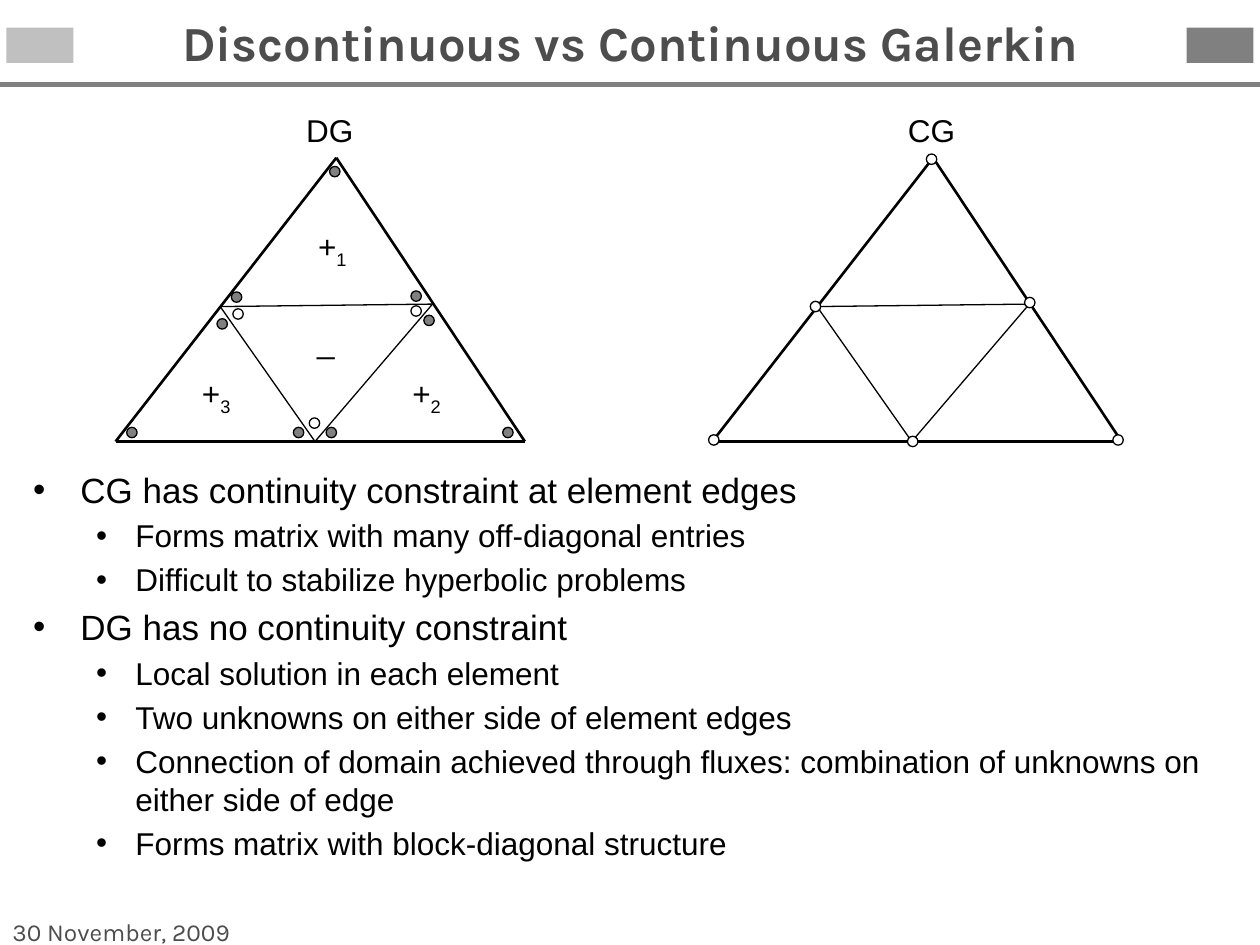
from lxml import etree
from pptx import Presentation
from pptx.dml.color import RGBColor
from pptx.enum.shapes import MSO_CONNECTOR, MSO_SHAPE
from pptx.enum.text import MSO_ANCHOR, MSO_AUTO_SIZE, PP_ALIGN
from pptx.oxml.ns import qn
from pptx.util import Cm, Pt

BLACK = RGBColor(0x00, 0x00, 0x00)
WHITE = RGBColor(0xFF, 0xFF, 0xFF)
GREY = RGBColor(0x80, 0x80, 0x80)
SILVER = RGBColor(0xC0, 0xC0, 0xC0)
CHARCOAL = RGBColor(0x4D, 0x4D, 0x4D)

SLIDE_WIDTH, SLIDE_HEIGHT = 25.4, 19.05
NODE_SIZE = 0.21
LABEL_WIDTH, LABEL_HEIGHT = 1.48, 1.02

# Mesh geometry in cm, relative to the top left of a mesh
LEFT, APEX, RIGHT = (0, 5.72), (4.45, 0), (8.25, 5.72)
BASE_MID, LEFT_MID, RIGHT_MID = (4.02, 5.72), (2.11, 3), (6.39, 2.95)
OUTER_EDGES = [(LEFT, RIGHT), (LEFT, APEX), (APEX, RIGHT)]
INNER_EDGES = [(BASE_MID, RIGHT_MID), (BASE_MID, LEFT_MID), (LEFT_MID, RIGHT_MID)]

CG_NODES = [(0.03, 5.69), (4.04, 5.72), (4.42, 0.03),
            (8.18, 5.69), (2.08, 3), (6.4, 2.92)]
DG_INNER_NODES = [(4.01, 5.35), (2.47, 3.15), (6.06, 3.09)]
DG_OUTER_NODES = [(0.33, 5.54), (4.42, 0.28), (7.91, 5.54),
                  (2.15, 3.35), (2.44, 2.81), (3.69, 5.54),
                  (4.35, 5.54), (6.32, 3.28), (6.06, 2.79)]
# Sign, subscript, centre x, top
DG_LABELS = [("_", "", 4.24, 3.18), ("+", "3", 2.03, 4.24),
             ("+", "2", 6.27, 4.24), ("+", "1", 4.37, 1.27)]

# Level and wording
POINTS = [
    (0, "CG has continuity constraint at element edges"),
    (1, "Forms matrix with many off-diagonal entries"),
    (1, "Difficult to stabilize hyperbolic problems"),
    (0, "DG has no continuity constraint"),
    (1, "Local solution in each element"),
    (1, "Two unknowns on either side of element edges"),
    (1, "Connection of domain achieved through fluxes: combination of "
        "unknowns on either side of edge"),
    (1, "Forms matrix with block-diagonal structure"),
]
# Size, left margin, hanging indent for each level
LEVELS = [(20, 0.95, 0.95), (18, 2.06, 0.79)]


def set_font(font, size, name="Arial", color=BLACK, bold=False):
    font.size, font.name, font.bold = Pt(size), name, bold
    font.color.rgb = color


def add_line(slide, start, end, color, width):
    line = slide.shapes.add_connector(
        MSO_CONNECTOR.STRAIGHT, *(Cm(value) for value in (*start, *end)))
    line.line.color.rgb = color
    line.line.width = Pt(width)
    etree.SubElement(line._element.spPr, qn("a:effectLst"))


def add_filled(slide, preset, left, top, width, height, fill):
    shape = slide.shapes.add_shape(preset, Cm(left), Cm(top), Cm(width), Cm(height))
    shape.shadow.inherit = False
    shape.fill.solid()
    shape.fill.fore_color.rgb = fill
    return shape


def add_text(slide, left, top, width, height, text):
    box = slide.shapes.add_textbox(Cm(left), Cm(top), Cm(width), Cm(height))
    box.text_frame.text = text
    box.text_frame.word_wrap = True
    return box.text_frame


def add_label(slide, center, top, text, subscript=""):
    frame = add_text(slide, center - LABEL_WIDTH / 2, top,
                     LABEL_WIDTH, LABEL_HEIGHT, text)
    frame.word_wrap = False
    frame.auto_size = MSO_AUTO_SIZE.SHAPE_TO_FIT_TEXT
    paragraph = frame.paragraphs[0]
    paragraph.alignment = PP_ALIGN.CENTER
    if subscript:
        index = paragraph.add_run()
        index.text = subscript
        index._r.get_or_add_rPr().set("baseline", "-25000")
    for run in paragraph.runs:
        set_font(run.font, 18)


def add_header(slide, left, top, width, height):
    add_line(slide, (left, top + height), (left + width, top + height), GREY, 3)
    # Plain emblem blocks at both ends
    emblem_width, emblem_height, margin = 1.35, 0.71, 0.13
    for x, fill in ((left + margin, SILVER),
                    (left + width - margin - emblem_width, GREY)):
        emblem = add_filled(slide, MSO_SHAPE.RECTANGLE, x, top + 0.56,
                            emblem_width, emblem_height, fill)
        emblem.line.fill.background()
    # Title
    frame = add_text(slide, left + 1.9, top, width - 3.8, height,
                     "Discontinuous vs Continuous Galerkin")
    frame.vertical_anchor = MSO_ANCHOR.MIDDLE
    title = frame.paragraphs[0]
    title.alignment = PP_ALIGN.CENTER
    set_font(title.runs[0].font, 28, "Karla", CHARCOAL, True)


def add_mesh(slide, left, top, name, name_center, node_sets, labels=()):
    for edges, width in ((OUTER_EDGES, 1.5), (INNER_EDGES, 0.75)):
        for (x1, y1), (x2, y2) in edges:
            add_line(slide, (left + x1, top + y1), (left + x2, top + y2), BLACK, width)
    for nodes, fill in node_sets:
        for x, y in nodes:
            node = add_filled(slide, MSO_SHAPE.OVAL, left + x - NODE_SIZE / 2,
                              top + y - NODE_SIZE / 2, NODE_SIZE, NODE_SIZE, fill)
            node.line.color.rgb = BLACK
            node.line.width = Pt(0.75)
    for sign, subscript, x, y in labels:
        add_label(slide, left + x, top + y, sign, subscript)
    add_label(slide, left + name_center, top - 1.07, name)


def add_points(slide, left, top, width, height):
    frame = add_text(slide, left, top, width, height,
                     "\n".join(text for _, text in POINTS))
    for number, (paragraph, (level, _)) in enumerate(zip(frame.paragraphs, POINTS)):
        size, margin, hanging = LEVELS[level]
        paragraph.level = level
        properties = paragraph._p.get_or_add_pPr()
        properties.set("marL", str(Cm(margin)))
        properties.set("indent", str(-Cm(hanging)))
        if number:
            paragraph.space_before = Pt(size * 0.2)
        etree.SubElement(properties, qn("a:buFont"), typeface="Arial")
        etree.SubElement(properties, qn("a:buChar"), char="•")
        set_font(paragraph.runs[0].font, size)


def add_date(slide, left, top, width, height):
    frame = add_text(slide, left, top, width, height, "30 November, 2009")
    set_font(frame.paragraphs[0].runs[0].font, 14, "Karla", CHARCOAL)


def main():
    presentation = Presentation()
    presentation.slide_width = Cm(SLIDE_WIDTH)
    presentation.slide_height = Cm(SLIDE_HEIGHT)
    slide = presentation.slides.add_slide(presentation.slide_layouts[6])

    add_header(slide, 0, 0, SLIDE_WIDTH, 1.7)
    add_date(slide, 0, 18.36, 5.92, 1.32)
    add_points(slide, 0.42, 9.31, 24.55, 9.1)
    add_mesh(slide, 14.36, 3.18, "CG", 4.42, [(CG_NODES, WHITE)])
    add_mesh(slide, 2.33, 3.18, "DG", 4.32,
             [(DG_INNER_NODES, WHITE), (DG_OUTER_NODES, GREY)], DG_LABELS)

    presentation.save("out.pptx")


if __name__ == "__main__":
    main()
